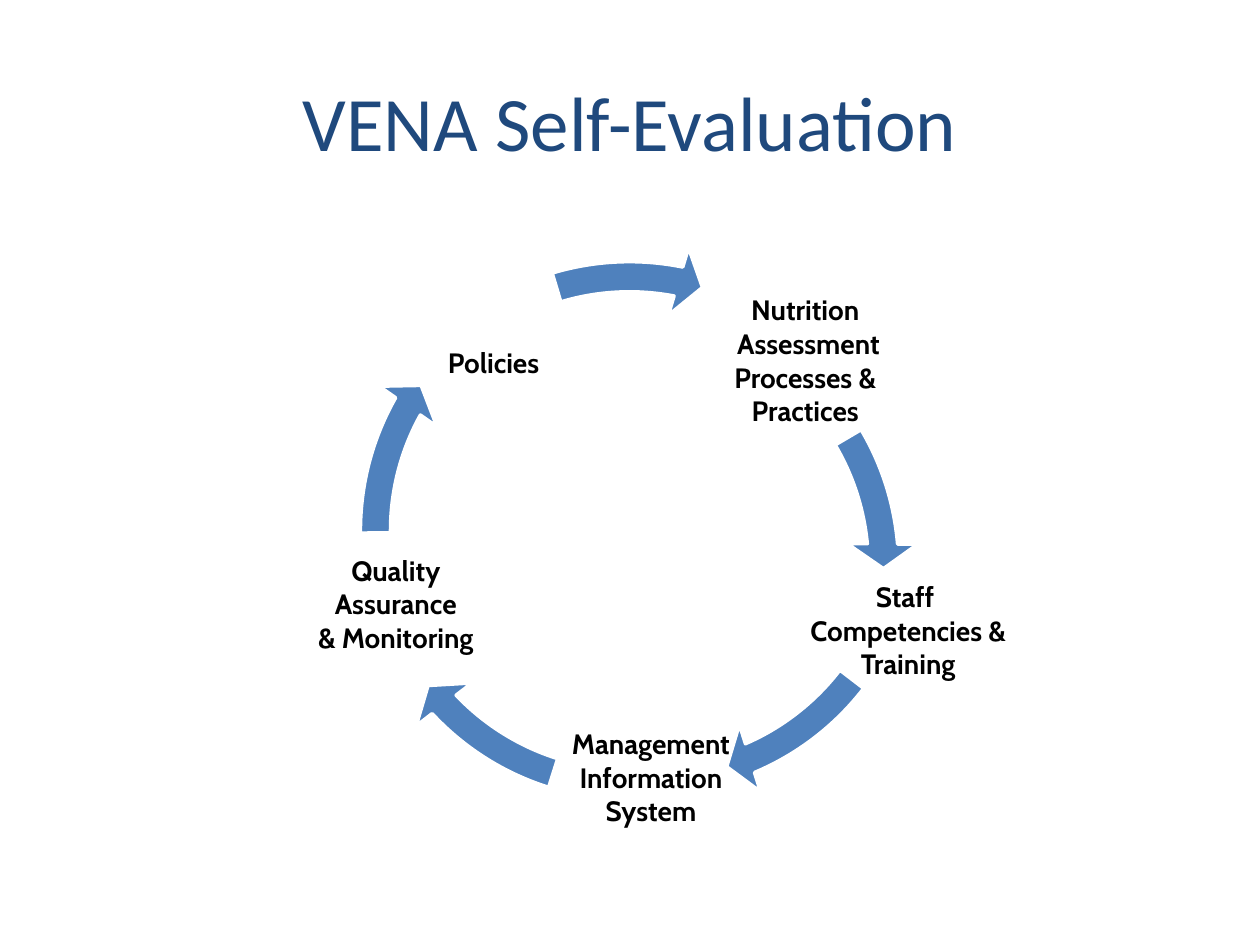
from dataclasses import dataclass
from typing import NamedTuple

from pptx import Presentation
from pptx.dml.color import RGBColor
from pptx.enum.shapes import MSO_SHAPE
from pptx.enum.text import MSO_ANCHOR, PP_ALIGN
from pptx.util import Inches, Length, Pt


@dataclass(frozen=True)
class Theme:
    title_color: RGBColor = RGBColor(0x1F, 0x49, 0x7D)
    label_color: RGBColor = RGBColor(0, 0, 0)
    arrow_fill: RGBColor = RGBColor(0x4F, 0x81, 0xBD)
    arrow_line: RGBColor = RGBColor(0xFF, 0xFF, 0xFF)
    title_font: str = "Calibri"
    label_font: str = "Cabin"
    title_size: int = 44
    label_size: int = 16
    line_width: int = 2


class Box(NamedTuple):
    """Place and size in grid cells."""
    col: float
    row: float
    cols: float
    rows: float


class Label(NamedTuple):
    box: Box
    lines: tuple[str, ...]


class Arrow(NamedTuple):
    """Arc in degrees, clockwise from the right, with its ring's top left."""
    start: float
    end: float
    col: float = 32.4
    row: float = 23


THEME = Theme()
CELLS_PER_INCH = 12  # the slide is a grid of 120 columns and 90 rows
RING = 55.1  # ring diameter in cells
BAND, HEAD_ANGLE, HEAD_WIDTH = 0.052, 5.6, 0.061

TITLE_BOX = Box(6, 4, 108, 15)

ARROWS = (
    Arrow(329.43, 354.9, row=26.4),
    Arrow(37.55, 66.93, col=34.4, row=22.4),
    Arrow(107.48, 136.86),
    Arrow(179.5, 209.31),
    Arrow(253.3, 281.11),
)

LABELS = (
    Label(Box(68, 27, 18, 14.6),
          ("Nutrition ", "Assessment", "Processes & ", "Practices ")),
    Label(Box(40, 29, 14, 11), ("Policies",)),
    Label(Box(29, 50, 18, 15), ("Quality ", "Assurance ", "& Monitoring ")),
    Label(Box(53, 69, 18, 10), ("Management Information System",)),
    Label(Box(77, 54, 19, 12), ("Staff ", "Competencies & Training")),
)


def place(box: Box) -> list[Length]:
    return [Inches(cells / CELLS_PER_INCH) for cells in box]


def angle(degrees: float) -> float:
    """Adjustments hold 60000ths of a degree, divided by 100000."""
    return degrees * 0.6


def add_line(p, text: str, font: str, size: int, color: RGBColor,
             bold: bool = False) -> None:
    p.alignment = PP_ALIGN.CENTER
    r = p.add_run()
    r.text = text
    r.font.name = font
    r.font.size = Pt(size)
    r.font.bold = bold
    r.font.color.rgb = color


def set_title(s, text: str) -> None:
    sp = s.shapes.title
    sp.left, sp.top, sp.width, sp.height = place(TITLE_BOX)
    tf = sp.text_frame
    tf.vertical_anchor = MSO_ANCHOR.MIDDLE
    add_line(tf.paragraphs[0], text, THEME.title_font, THEME.title_size,
             THEME.title_color)


def add_arrow(s, arrow: Arrow) -> None:
    sp = s.shapes.add_shape(MSO_SHAPE.CIRCULAR_ARROW,
                            *place(Box(arrow.col, arrow.row, RING, RING)))
    values = (BAND, angle(HEAD_ANGLE), angle(arrow.end), angle(arrow.start),
              HEAD_WIDTH)
    for i, value in enumerate(values):
        sp.adjustments[i] = value
    sp.shadow.inherit = False
    sp.fill.solid()
    sp.fill.fore_color.rgb = THEME.arrow_fill
    sp.line.color.rgb = THEME.arrow_line
    sp.line.width = Pt(THEME.line_width)


def add_label(s, label: Label) -> None:
    tf = s.shapes.add_textbox(*place(label.box)).text_frame
    tf.word_wrap = True
    tf.vertical_anchor = MSO_ANCHOR.MIDDLE
    tf.margin_left = tf.margin_right = tf.margin_top = tf.margin_bottom = 0
    for i, line in enumerate(label.lines):
        p = tf.add_paragraph() if i else tf.paragraphs[0]
        add_line(p, line, THEME.label_font, THEME.label_size,
                 THEME.label_color, bold=True)


def main() -> None:
    prs = Presentation()
    prs.slide_width, prs.slide_height = Inches(10), Inches(7.5)
    s = prs.slides.add_slide(prs.slide_layouts[5])  # title only

    set_title(s, "VENA Self-Evaluation")

    # Ring of arrows
    for arrow in ARROWS:
        add_arrow(s, arrow)

    # Steps of the cycle
    for label in LABELS:
        add_label(s, label)

    prs.save("out.pptx")


if __name__ == "__main__":
    main()
